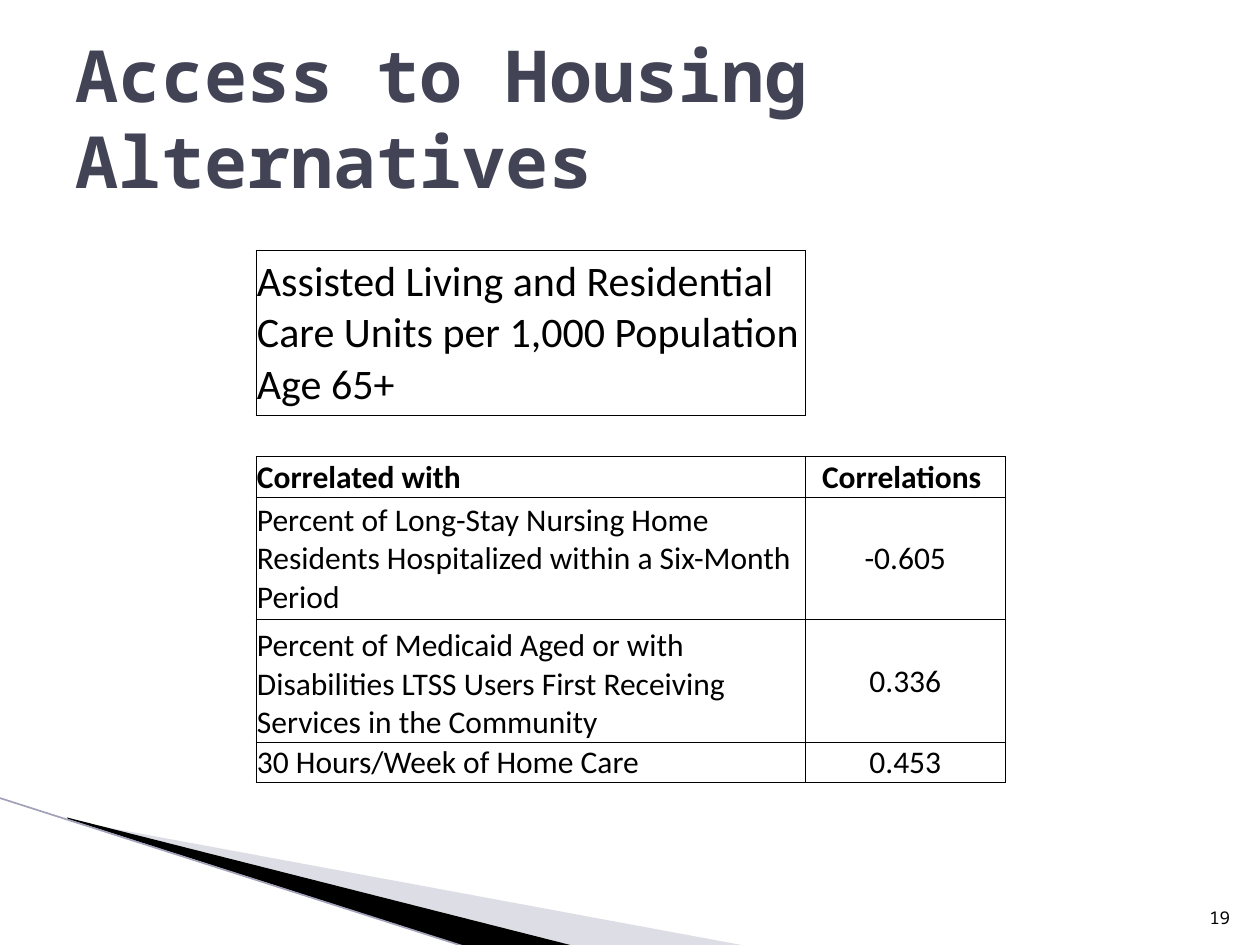
import pptx
import pptx.dml.color
import pptx.enum.shapes
import pptx.enum.text
import pptx.oxml
import pptx.oxml.ns
import pptx.util

Cm, Pt = pptx.util.Cm, pptx.util.Pt
Align = pptx.enum.text.PP_ALIGN
Anchor = pptx.enum.text.MSO_ANCHOR
SPACE = pptx.oxml.ns.nsdecls("a")
BLACK = "000000"


def color(code):
    return pptx.dml.color.RGBColor.from_string(code)


def node(tag, inner="", **attrs):
    """Make a drawing element with the given attributes and content."""
    item = pptx.oxml.parse_xml(f"<a:{tag} {SPACE}>{inner}</a:{tag}>")
    for key, value in attrs.items():
        item.set(key, str(value))
    return item


class Deck:
    mono, sans = "Noto Sans Mono", "Calibri"

    def __init__(self):
        self.prs = pptx.Presentation()
        self.prs.slide_width, self.prs.slide_height = Cm(25.4), Cm(19.05)
        self.slide = self.prs.slides.add_slide(self.prs.slide_layouts[5])
        self.shapes = self.slide.shapes

    def text(self, frame, words, size, face, tint=BLACK, bold=False, align=Align.LEFT):
        para = frame.paragraphs[0]
        para.alignment = align
        run = para.add_run()
        run.text = words
        font = run.font
        font.size, font.name, font.bold = Pt(size), face, bold
        font.color.rgb = color(tint)

    def title(self, words, box):
        shape = self.shapes.title
        shape.left, shape.top, shape.width, shape.height = map(Cm, box)
        frame = shape.text_frame
        frame.auto_size = pptx.enum.text.MSO_AUTO_SIZE.NONE
        frame.vertical_anchor = Anchor.MIDDLE
        self.text(frame, words, 41, self.mono, "424456", True)

    def number(self, words, box):
        frame = self.shapes.add_textbox(*map(Cm, box)).text_frame
        frame.word_wrap = True
        frame.vertical_anchor = Anchor.BOTTOM
        self.text(frame, words, 10, self.mono, align=Align.RIGHT)

    def wedge(self, points, tint, alpha=100):
        first, *rest = [(Cm(x), Cm(y)) for x, y in points]
        build = self.shapes.build_freeform(*first)
        build.add_line_segments(rest, close=True)
        shape = build.convert_to_shape()
        shape.shadow.inherit = False
        shape.line.fill.background()
        shape.fill.solid()
        shape.fill.fore_color.rgb = color(tint)
        if alpha < 100:
            fill = shape._element.spPr.find(pptx.oxml.ns.qn("a:solidFill"))
            fill[0].append(node("alpha", val=alpha * 1000))

    def line(self, start, end, tint, width):
        kind = pptx.enum.shapes.MSO_CONNECTOR.STRAIGHT
        link = self.shapes.add_connector(kind, *map(Cm, start + end))
        link.line.color.rgb = color(tint)
        link.line.width = Pt(width)
        link._element.spPr.append(node("effectLst"))

    def edge(self, cell, sides):
        """Rule the named sides of a cell and clear the others."""
        props = cell._tc.get_or_add_tcPr()
        ink = f'<a:solidFill><a:srgbClr val="{BLACK}"/></a:solidFill>'
        for spot, side in enumerate("LRTB"):
            fill = ink if side in sides else "<a:noFill/>"
            props.insert(spot, node(f"ln{side}", fill, w=Pt(0.5)))

    def table(self, rows, spot, widths, heights, edges):
        size = sum(widths), sum(heights)
        grid = self.shapes.add_table(len(rows), len(widths), *map(Cm, spot + size)).table
        grid.first_row = grid.horz_banding = False
        for col, width in zip(grid.columns, widths):
            col.width = Cm(width)
        for r, (row, height) in enumerate(zip(rows, heights)):
            grid.rows[r].height = Cm(height)
            for c, words in enumerate(row):
                cell = grid.cell(r, c)
                cell.margin_left = cell.margin_right = cell.margin_top = Cm(0.02)
                cell.margin_bottom = 0
                low = r == 2 or (r, c) == (4, 0)
                cell.vertical_anchor = Anchor.BOTTOM if low else Anchor.MIDDLE
                cell.fill.background()
                self.edge(cell, edges.get((r, c), "LRTB"))
                if words:
                    self.text(cell.text_frame, words, 18 if r else 24, self.sans,
                              bold=r == 2, align=Align.CENTER if c else Align.LEFT)


def main():
    deck = Deck()
    deck.wedge([(1.4, 16.54), (15.11, 19.08), (11.58, 19.08), (1.4, 16.51)], "AAAABF", 40)
    deck.wedge([(1.35, 16.48), (11.61, 19.08), (9.45, 19.1), (1.37, 16.51)], BLACK)
    deck.line((-0.03, 16.08), (9.42, 19.1), "A1A1B9", 0.95)
    deck.number("19", (24.03, 17.81, 1.02, 1.02))
    deck.title("Access to Housing Alternatives", (1.27, 0.76, 22.86, 3.18))
    rows = [
        ("Assisted Living and Residential Care Units per 1,000 Population Age 65+", ""),
        ("", ""),
        ("Correlated with", "Correlations "),
        ("Percent of Long-Stay Nursing Home Residents Hospitalized within a "
         "Six-Month Period", "-0.605"),
        ("Percent of Medicaid Aged or with Disabilities LTSS Users First Receiving "
         "Services in the Community", "0.336"),
        ("30 Hours/Week of Home Care", "0.453"),
    ]
    deck.table(rows, (5.16, 5.05), (11.08, 4.02), (3.33, 0.82, 0.82, 2.47, 2.47, 0.82),
               {(0, 1): "L", (1, 0): "TB", (1, 1): "B"})
    deck.prs.save("out.pptx")


if __name__ == "__main__":
    main()
